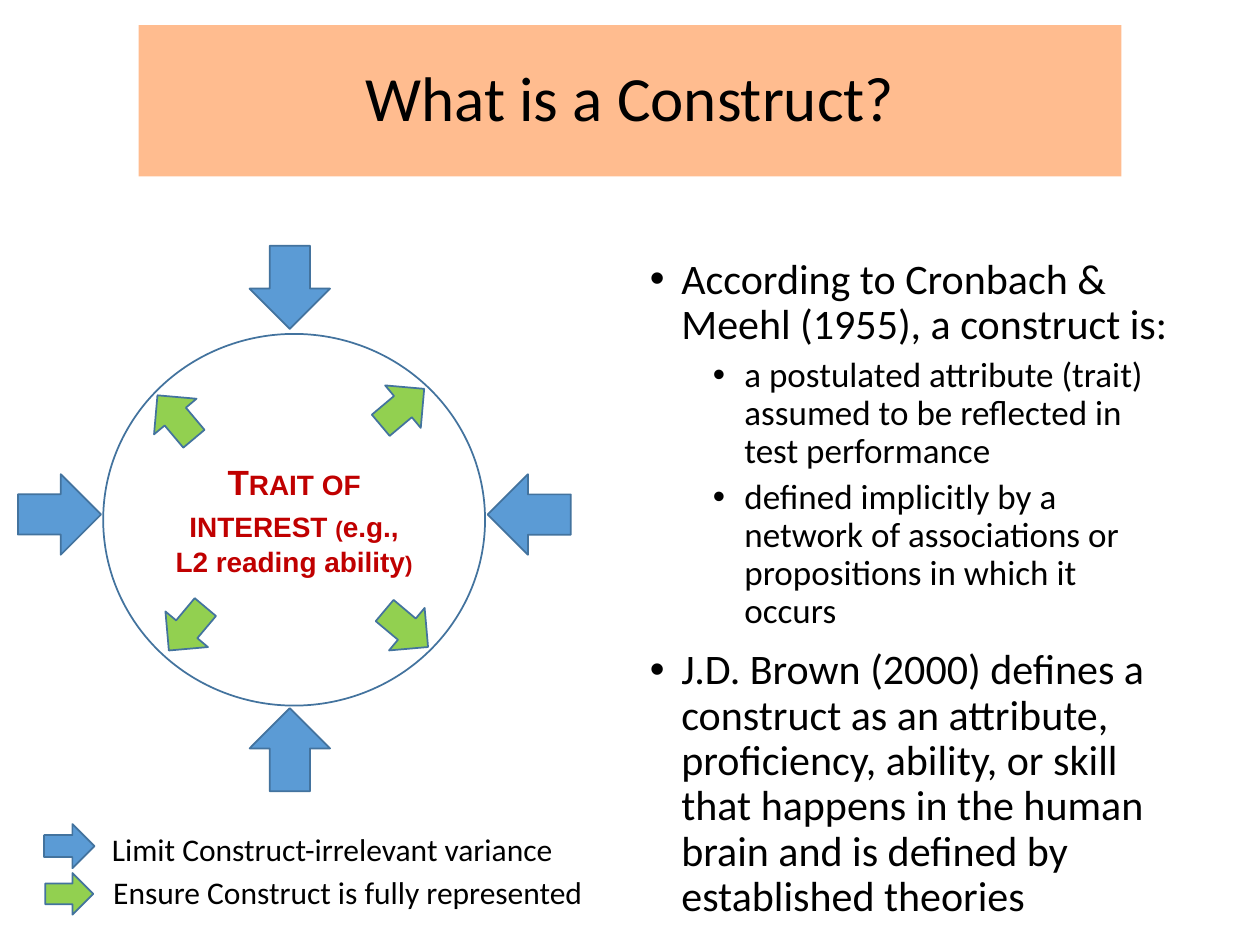
"""Build a slide that explains what a construct is."""
from dataclasses import dataclass

from lxml import etree
from pptx import Presentation
from pptx.dml.color import RGBColor
from pptx.enum.shapes import MSO_SHAPE
from pptx.enum.text import MSO_ANCHOR, MSO_AUTO_SIZE, PP_ALIGN
from pptx.oxml.ns import qn
from pptx.util import Pt

RECTANGLE = MSO_SHAPE.RECTANGLE
ELLIPSE = MSO_SHAPE.OVAL
RIGHT_ARROW = MSO_SHAPE.RIGHT_ARROW
MIDDLE = MSO_ANCHOR.MIDDLE
CENTER = PP_ALIGN.CENTER
LEFT = PP_ALIGN.LEFT
GROW = MSO_AUTO_SIZE.SHAPE_TO_FIT_TEXT

BLACK = "000000"
BLUE = "5B9BD5"
GREEN = "92D050"
OUTLINE = "43739E"
PEACH = "FFBC8F"
RED = "C00000"


@dataclass(frozen=True)
class Arrow:
    center_x: float
    center_y: float
    width: float
    height: float
    angle: float
    fill: str


@dataclass(frozen=True)
class Bullet:
    text: str
    level: int = 0


@dataclass(frozen=True)
class TraitRun:
    text: str
    size: float
    small_caps: bool


@dataclass(frozen=True)
class Label:
    text: str
    left: float
    top: float
    width: float


LIMITS = [
    Arrow(x, y, 47.5, 46, angle, BLUE)
    for x, y, angle in [(34, 294, 0), (302.4, 294, 180), (165.6, 428.4, 270), (165.6, 164.2, 90)]
]
REPRESENTATIONS = [
    Arrow(x, y, 32.4, 31.7, angle, GREEN)
    for x, y, angle in [(100.4, 238.3, 230), (230, 232.6, 320), (232.2, 359.3, 40), (106.9, 359.3, 130)]
]
LEGEND_ARROWS = [
    Arrow(39.6, 483.5, 28.8, 25.2, 0, BLUE),
    Arrow(39.6, 510.8, 27.4, 23.8, 0, GREEN),
]
LEGEND_LABELS = [
    Label("Limit Construct-irrelevant variance", 56.9, 470.9, 273.6),
    Label("Ensure Construct is fully represented", 57.6, 495.4, 283.7),
]
TRAIT_RUNS = [
    TraitRun("Trait of interest ", 20, True),
    TraitRun("(", 16, True),
    TraitRun("e.g., L2 reading ability", 16, False),
    TraitRun(")", 16, True),
]
BULLETS = [
    Bullet("According to Cronbach & Meehl (1955), a construct is:"),
    Bullet("a postulated attribute (trait) assumed to be reflected in test performance", 1),
    Bullet("defined implicitly by a network of associations or propositions in which it occurs", 1),
    Bullet(
        "J.D. Brown (2000) defines a construct as an attribute, proficiency, ability, or skill "
        "that happens in the human brain and is defined by established theories"
    ),
]


def color(value: str) -> RGBColor:
    """Turn a hex string into a colour."""
    return RGBColor.from_string(value)


def format_font(font, size: float, name: str = "Calibri", fill: str = BLACK, bold: bool = False) -> None:
    """Set the look of a font."""
    font.name = name
    font.size = Pt(size)
    font.bold = bold
    font.color.rgb = color(fill)


def add_shape(slide, kind, left: float, top: float, width: float, height: float,
              fill: str | None = None, line: str | None = None):
    """Add a preset shape with an optional fill and outline."""
    shape = slide.shapes.add_shape(kind, Pt(left), Pt(top), Pt(width), Pt(height))
    shape.shadow.inherit = False
    if fill:
        shape.fill.solid()
        shape.fill.fore_color.rgb = color(fill)
    else:
        shape.fill.background()
    if line:
        shape.line.color.rgb = color(line)
        shape.line.width = Pt(1)
    else:
        shape.line.fill.background()
    return shape


def add_arrow(slide, arrow: Arrow) -> None:
    """Add a block arrow turned about its centre."""
    left = arrow.center_x - arrow.width / 2
    top = arrow.center_y - arrow.height / 2
    shape = add_shape(slide, RIGHT_ARROW, left, top, arrow.width, arrow.height, arrow.fill, OUTLINE)
    shape.rotation = arrow.angle


def add_text_box(slide, left: float, top: float, width: float, height: float):
    """Add a wrapping text box and return its text frame."""
    text_frame = slide.shapes.add_textbox(Pt(left), Pt(top), Pt(width), Pt(height)).text_frame
    text_frame.word_wrap = True
    return text_frame


def add_title(slide) -> None:
    """Add the title banner."""
    text_frame = add_shape(slide, RECTANGLE, 79.2, 14.4, 561.6, 86.4, PEACH).text_frame
    text_frame.text = "What is a Construct?"
    text_frame.vertical_anchor = MIDDLE
    paragraph = text_frame.paragraphs[0]
    paragraph.alignment = CENTER
    paragraph.line_spacing = 0.9
    format_font(paragraph.runs[0].font, 36)


def add_trait(slide) -> None:
    """Add the circle that names the trait."""
    text_frame = add_shape(slide, ELLIPSE, 59, 190.8, 218.2, 212.4, line=OUTLINE).text_frame
    text_frame.vertical_anchor = MIDDLE
    paragraph = text_frame.paragraphs[0]
    paragraph.alignment = CENTER
    for part in TRAIT_RUNS:
        run = paragraph.add_run()
        run.text = part.text
        format_font(run.font, part.size, "Arial", RED, True)
        if part.small_caps:
            run.font._element.set("cap", "small")


def add_bullets(slide) -> None:
    """Add the definitions as a two-level list."""
    text_frame = add_text_box(slide, 364.3, 144, 312.5, 391)
    text_frame.text = "\n".join(bullet.text for bullet in BULLETS)
    for bullet, paragraph in zip(BULLETS, text_frame.paragraphs):
        paragraph.level = bullet.level
        paragraph.alignment = LEFT
        paragraph.line_spacing = 0.9
        paragraph.space_before = Pt(5 if bullet.level else 10)
        format_font(paragraph.runs[0].font, 20 if bullet.level else 24)
        properties = paragraph._p.get_or_add_pPr()
        properties.set("marL", str(Pt(18 + 36 * bullet.level)))
        properties.set("indent", str(Pt(-18)))
        etree.SubElement(properties, qn("a:buFont")).set("typeface", "Arial")
        etree.SubElement(properties, qn("a:buChar")).set("char", "•")


def add_label(slide, label: Label) -> None:
    """Add one legend label."""
    text_frame = add_text_box(slide, label.left, label.top, label.width, 29)
    text_frame.auto_size = GROW
    text_frame.text = label.text
    format_font(text_frame.paragraphs[0].runs[0].font, 18)


def main() -> None:
    """Build and save the presentation."""
    presentation = Presentation()
    presentation.slide_width, presentation.slide_height = Pt(720), Pt(540)
    slide = presentation.slides.add_slide(presentation.slide_layouts[6])
    add_trait(slide)
    for arrow in LIMITS + REPRESENTATIONS:
        add_arrow(slide, arrow)
    add_title(slide)
    add_bullets(slide)
    for arrow in LEGEND_ARROWS:
        add_arrow(slide, arrow)
    for label in LEGEND_LABELS:
        add_label(slide, label)
    presentation.save("out.pptx")


if __name__ == "__main__":
    main()
